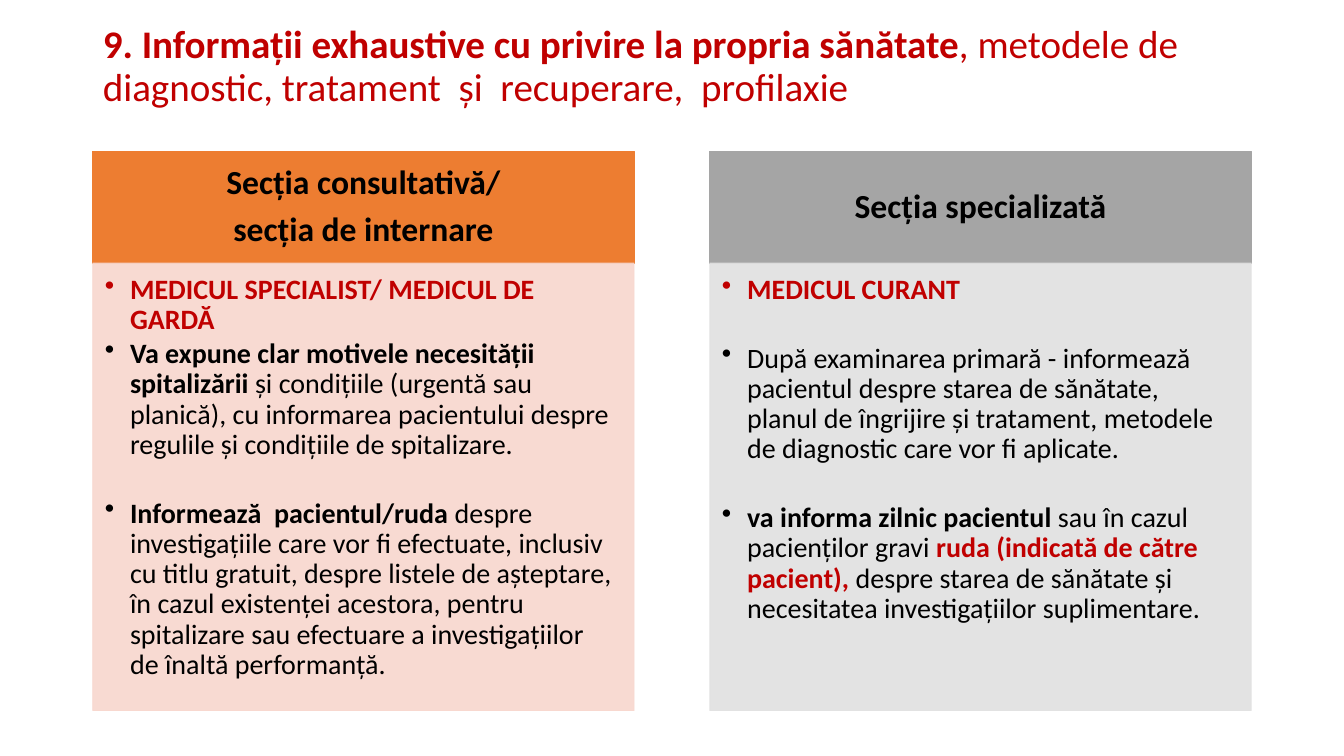
from dataclasses import dataclass

from lxml import etree
from pptx import Presentation
from pptx.dml.color import RGBColor
from pptx.enum import shapes, text
from pptx.oxml import ns
from pptx.util import Inches, Pt


@dataclass(frozen=True)
class Theme:
    font: str = "Calibri"
    black: str = "000000"
    red: str = "C00000"
    title_size: float = 27.9
    header_size: float = 24
    body_size: float = 20
    line_spacing: float = 0.9
    header_gap: float = 8
    item_gap: float = 2.7
    section_gap: float = 27.5
    body_opacity: int = 90


THEME = Theme()


@dataclass(frozen=True)
class Span:
    content: str
    bold: bool = False
    color: str = THEME.black


@dataclass(frozen=True)
class Item:
    spans: list[Span]
    gap: float = THEME.section_gap


@dataclass(frozen=True)
class Column:
    header: list[str]
    header_fill: str
    body_fill: str
    items: list[Item]


# Content
TITLE = [
    Span("9. Informații exhaustive cu privire la propria sănătate", True, THEME.red),
    Span(", metodele de diagnostic, tratament  și  recuperare,  profilaxie", False, THEME.red),
]
COLUMNS = [
    Column(["Secția consultativă/", "secția de internare"], "ED7D31", "F8D7CE", [
        Item([Span("MEDICUL SPECIALIST/ MEDICUL DE GARDĂ", True, THEME.red)], 0),
        Item([
            Span("Va expune clar motivele necesității spitalizării ", True),
            Span("și condițiile (urgentă sau planică), cu informarea pacientului despre "
                 "regulile și condițiile de spitalizare."),
        ], THEME.item_gap),
        Item([
            Span("Informează  pacientul/ruda ", True),
            Span("despre investigațiile care vor fi efectuate, inclusiv cu titlu gratuit, "
                 "despre listele de așteptare, în cazul existenței acestora, pentru "
                 "spitalizare sau efectuare a investigațiilor de înaltă performanță."),
        ]),
    ]),
    Column(["Secția specializată"], "A5A5A5", "E1E1E1", [
        Item([Span("MEDICUL CURANT", True, THEME.red)], 0),
        Item([
            Span("După examinarea primară - informează pacientul despre starea de sănătate,  "
                 "planul de îngrijire și tratament, metodele de diagnostic care vor fi aplicate."),
        ]),
        Item([
            Span("va informa zilnic pacientul ", True),
            Span("sau în cazul pacienților gravi "),
            Span("ruda (indicată de către pacient), ", True, THEME.red),
            Span("despre starea de sănătate și necesitatea investigațiilor suplimentare."),
        ]),
    ]),
]

# Layout, in inches
LEFT, COLUMN_STEP, COLUMN_WIDTH = 0.92, 6.12, 5.37
HEADER_TOP, HEADER_HEIGHT = 1.5, 1.11
BODY_TOP, BODY_HEIGHT = HEADER_TOP + HEADER_HEIGHT, 4.44


def write_spans(paragraph, spans: list[Span], size: float) -> None:
    paragraph.line_spacing = THEME.line_spacing
    for span in spans:
        run = paragraph.add_run()
        run.text = span.content
        run.font.name = THEME.font
        run.font.size = Pt(size)
        run.font.bold = span.bold
        run.font.color.rgb = RGBColor.from_string(span.color)


def set_margins(frame, left: float, top: float, right: float, bottom: float) -> None:
    frame.margin_left, frame.margin_top = Inches(left), Inches(top)
    frame.margin_right, frame.margin_bottom = Inches(right), Inches(bottom)


def add_bullet(paragraph) -> None:
    properties = paragraph._p.get_or_add_pPr()
    properties.set("marL", str(Inches(0.25)))
    properties.set("indent", str(Inches(-0.25)))
    etree.SubElement(properties, ns.qn("a:buChar")).set("char", "•")


def add_panel(slide, left: float, top: float, height: float, color: str, opacity: int = 100):
    shape = slide.shapes.add_shape(
        shapes.MSO_SHAPE.RECTANGLE,
        Inches(left), Inches(top), Inches(COLUMN_WIDTH), Inches(height))
    shape.shadow.inherit = False
    shape.line.width = Pt(0.5)
    for fill in (shape.fill, shape.line.fill):
        fill.solid()
        fill.fore_color.rgb = RGBColor.from_string(color)
    if opacity < 100:
        for element in shape._element.spPr.iter(ns.qn("a:srgbClr")):
            etree.SubElement(element, ns.qn("a:alpha")).set("val", str(opacity * 1000))
    shape.text_frame.word_wrap = True
    return shape


def add_paragraph(frame, index: int):
    return frame.add_paragraph() if index else frame.paragraphs[0]


def add_column(slide, column: Column, left: float) -> None:
    # Header
    frame = add_panel(slide, left, HEADER_TOP, HEADER_HEIGHT, column.header_fill).text_frame
    set_margins(frame, 0.19, 0.11, 0.19, 0.11)
    frame.vertical_anchor = text.MSO_ANCHOR.MIDDLE
    for index, line in enumerate(column.header):
        paragraph = add_paragraph(frame, index)
        paragraph.alignment = text.PP_ALIGN.CENTER
        paragraph.space_before = Pt(THEME.header_gap if index else 0)
        write_spans(paragraph, [Span(line, True)], THEME.header_size)

    # Bulleted body
    frame = add_panel(slide, left, BODY_TOP, BODY_HEIGHT, column.body_fill,
                      THEME.body_opacity).text_frame
    set_margins(frame, 0.12, 0.12, 0.16, 0.17)
    frame.vertical_anchor = text.MSO_ANCHOR.TOP
    for index, item in enumerate(column.items):
        paragraph = add_paragraph(frame, index)
        paragraph.alignment = text.PP_ALIGN.LEFT
        paragraph.space_before = Pt(item.gap)
        write_spans(paragraph, item.spans, THEME.body_size)
        add_bullet(paragraph)


def add_title(slide) -> None:
    title = slide.shapes.title
    title.left, title.top = Inches(LEFT), Inches(0.2)
    title.width, title.height = Inches(11.5), Inches(1.22)
    frame = title.text_frame
    frame.word_wrap = True
    frame.auto_size = text.MSO_AUTO_SIZE.NONE
    frame.vertical_anchor = text.MSO_ANCHOR.TOP
    set_margins(frame, 0.1, 0.05, 0.1, 0.05)
    paragraph = frame.paragraphs[0]
    paragraph.alignment = text.PP_ALIGN.LEFT
    paragraph.space_before = Pt(0)
    write_spans(paragraph, TITLE, THEME.title_size)


def main() -> None:
    presentation = Presentation()
    presentation.slide_width, presentation.slide_height = Inches(13.33), Inches(7.5)
    slide = presentation.slides.add_slide(presentation.slide_layouts[5])
    add_title(slide)
    for index, column in enumerate(COLUMNS):
        add_column(slide, column, LEFT + index * COLUMN_STEP)
    presentation.save("out.pptx")


if __name__ == "__main__":
    main()
